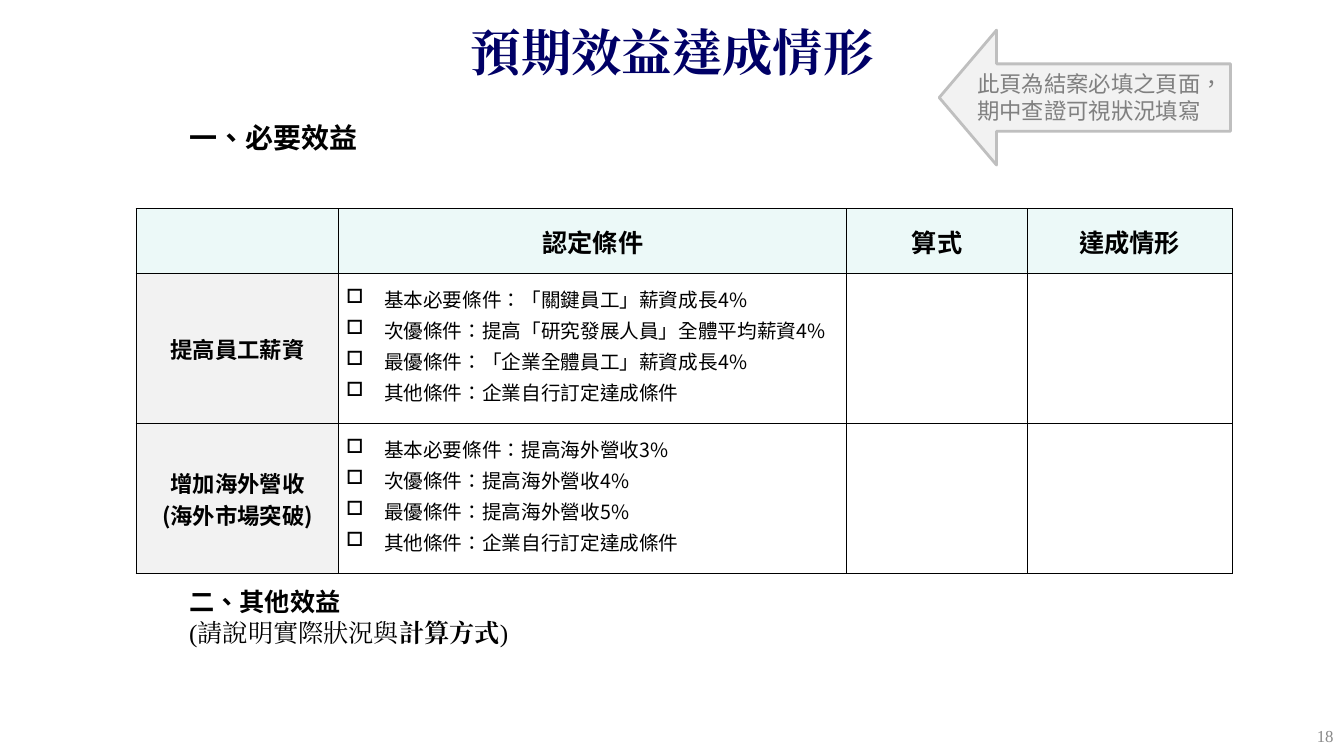
from dataclasses import dataclass

from lxml.etree import SubElement
from pptx import Presentation
from pptx.dml.color import RGBColor
from pptx.enum.shapes import MSO_SHAPE
from pptx.enum.text import MSO_ANCHOR, MSO_AUTO_SIZE, PP_ALIGN
from pptx.oxml.ns import qn
from pptx.util import Cm, Pt


@dataclass(frozen=True)
class Theme:
    sans: str = "Noto Sans CJK SC"
    serif: str = "Times New Roman"
    ink: str = "000000"
    navy: str = "000066"
    hint: str = "808080"
    page: str = "898989"
    header_fill: str = "ECF9F8"
    label_fill: str = "F2F2F2"
    arrow_line: str = "BFBFBF"
    title_size: int = 36
    heading_size: int = 20
    body_size: int = 18
    label_size: int = 16
    condition_size: int = 14
    page_size: int = 12
    line_factor: float = 1.2


THEME = Theme()


@dataclass(frozen=True)
class Style:
    size: int
    font: str = THEME.sans
    color: str = THEME.ink
    bold: bool = False


@dataclass(frozen=True)
class Box:
    left: float
    top: float
    width: float
    height: float

    def lengths(self) -> tuple:
        return Cm(self.left), Cm(self.top), Cm(self.width), Cm(self.height)


@dataclass(frozen=True)
class TextItem:
    """Each line is a list of (text, style) pieces."""
    box: Box
    lines: list
    wrap: bool = True
    align: PP_ALIGN = PP_ALIGN.LEFT
    anchor: MSO_ANCHOR = MSO_ANCHOR.TOP


@dataclass(frozen=True)
class Benefit:
    label: list
    conditions: list


HEADING = Style(THEME.heading_size, bold=True)
BODY_BOLD = Style(THEME.body_size, bold=True)
LABEL = Style(THEME.label_size, bold=True)
CONDITION = Style(THEME.condition_size)
HINT = Style(THEME.label_size, color=THEME.hint)
NOTE = Style(THEME.body_size, THEME.serif)
NOTE_BOLD = Style(THEME.body_size, THEME.serif, bold=True)
TITLE = Style(THEME.title_size, THEME.serif, THEME.navy, True)
PAGE = Style(THEME.page_size, THEME.serif, THEME.page)

TITLE_ITEM = TextItem(Box(1.7, 0.41, 30.48, 2), [[("預期效益達成情形", TITLE)]],
                      align=PP_ALIGN.CENTER)
TEXTS = [
    TextItem(Box(25.96, 18.03, 7.9, 1.02), [[("18", PAGE)]],
             align=PP_ALIGN.RIGHT, anchor=MSO_ANCHOR.MIDDLE),
    TextItem(Box(4.52, 14.66, 17.2, 2.82), [
        [("二、其他效益", BODY_BOLD)],
        [("(請說明實際狀況與", NOTE), ("計算方式", NOTE_BOLD), (")", NOTE)],
    ]),
    TextItem(Box(4.52, 2.92, 4.78, 1.11), [[("一、必要效益", HEADING)]], wrap=False),
]
HINT_ITEM = TextItem(Box(24.38, 1.65, 6.86, 1.63),
                     [[("此頁為結案必填之頁面，期中查證可視狀況填寫", HINT)]])
ARROW_BOX = Box(23.67, 0.76, 7.34, 3.4)

TABLE_BOX = Box(3.43, 5.26, 27.62, 9.19)
COLUMN_WIDTHS = [5.11, 12.8, 4.55, 5.16]
ROW_HEIGHTS = [1.63, 3.78, 3.78]
HEADERS = ["", "認定條件", "算式", "達成情形"]
BENEFITS = [
    Benefit(["提高員工薪資"], [
        "基本必要條件：「關鍵員工」薪資成長4%",
        "次優條件：提高「研究發展人員」全體平均薪資4%",
        "最優條件：「企業全體員工」薪資成長4%",
        "其他條件：企業自行訂定達成條件",
    ]),
    Benefit(["增加海外營收", "(海外市場突破)"], [
        "基本必要條件：提高海外營收3%",
        "次優條件：提高海外營收4%",
        "最優條件：提高海外營收5%",
        "其他條件：企業自行訂定達成條件",
    ]),
]


def add_styled_run(paragraph, text: str, style: Style) -> None:
    run = paragraph.add_run()
    run.text = text
    run.font.size = Pt(style.size)
    run.font.bold = style.bold
    run.font.color.rgb = RGBColor.from_string(style.color)
    run.font.name = style.font
    properties = run._r.get_or_add_rPr()
    properties.set("lang", "zh-TW")
    SubElement(properties, qn("a:ea"), typeface=style.font)


def write_lines(text_frame, lines: list, align: PP_ALIGN) -> list:
    text_frame.text = "\n" * (len(lines) - 1)
    for paragraph, pieces in zip(text_frame.paragraphs, lines):
        paragraph.alignment = align
        for text, style in pieces:
            add_styled_run(paragraph, text, style)
    return list(text_frame.paragraphs)


def fill_text_shape(shape, item: TextItem) -> None:
    shape.left, shape.top, shape.width, shape.height = item.box.lengths()
    frame = shape.text_frame
    frame.word_wrap = item.wrap
    frame.auto_size = MSO_AUTO_SIZE.NONE
    frame.vertical_anchor = item.anchor
    for paragraph, pieces in zip(write_lines(frame, item.lines, item.align), item.lines):
        paragraph.line_spacing = Pt(pieces[0][1].size * THEME.line_factor)


def add_hint_arrow(slide) -> None:
    group = slide.shapes.add_group_shape()
    arrow = group.shapes.add_shape(MSO_SHAPE.LEFT_ARROW, *ARROW_BOX.lengths())
    arrow.adjustments[0], arrow.adjustments[1] = 0.5, 0.425
    arrow.shadow.inherit = False
    arrow.fill.solid()
    arrow.fill.fore_color.rgb = RGBColor.from_string(THEME.label_fill)
    arrow.line.color.rgb = RGBColor.from_string(THEME.arrow_line)
    arrow.line.width = Pt(2)
    fill_text_shape(group.shapes.add_textbox(*HINT_ITEM.box.lengths()), HINT_ITEM)


def format_cell(cell, fill: str) -> None:
    """Give a cell its borders, margins and fill; an empty fill means none."""
    properties = cell._tc.get_or_add_tcPr()
    for side in ("lnL", "lnR", "lnT", "lnB"):
        line = SubElement(properties, qn(f"a:{side}"), w=str(Pt(1)))
        SubElement(SubElement(line, qn("a:solidFill")), qn("a:srgbClr"), val=THEME.ink)
    cell.margin_left = cell.margin_right = Cm(0.18)
    cell.margin_top = cell.margin_bottom = Cm(0)
    cell.vertical_anchor = MSO_ANCHOR.MIDDLE
    if fill:
        cell.fill.solid()
        cell.fill.fore_color.rgb = RGBColor.from_string(fill)
    else:
        cell.fill.background()


def write_conditions(cell, conditions: list) -> None:
    lines = [[(text, CONDITION)] for text in conditions]
    for index, paragraph in enumerate(write_lines(cell.text_frame, lines, PP_ALIGN.JUSTIFY)):
        properties = paragraph._p.get_or_add_pPr()
        properties.set("marL", str(Cm(0.96)))
        properties.set("indent", str(-Cm(0.96)))
        SubElement(properties, qn("a:buChar"), char="□")
        paragraph.line_spacing = Pt(16)
        paragraph.space_before = Pt(6 if index else 0)


def add_benefit_table(slide) -> None:
    table = slide.shapes.add_table(len(ROW_HEIGHTS), len(COLUMN_WIDTHS),
                                   *TABLE_BOX.lengths()).table
    table.first_row = table.horz_banding = False
    for column, width in zip(table.columns, COLUMN_WIDTHS):
        column.width = Cm(width)
    for row, height in zip(table.rows, ROW_HEIGHTS):
        row.height = Cm(height)
    for column, header in enumerate(HEADERS):
        cell = table.cell(0, column)
        format_cell(cell, THEME.header_fill)
        if header:
            write_lines(cell.text_frame, [[(header, BODY_BOLD)]], PP_ALIGN.CENTER)
    for row, benefit in enumerate(BENEFITS, start=1):
        for column in range(len(HEADERS)):
            format_cell(table.cell(row, column), "" if column else THEME.label_fill)
        label_lines = [[(text, LABEL)] for text in benefit.label]
        write_lines(table.cell(row, 0).text_frame, label_lines, PP_ALIGN.CENTER)
        write_conditions(table.cell(row, 1), benefit.conditions)


def main() -> None:
    presentation = Presentation()
    presentation.slide_width, presentation.slide_height = Cm(33.87), Cm(19.05)
    slide = presentation.slides.add_slide(presentation.slide_layouts.get_by_name("Title Only"))
    fill_text_shape(slide.shapes.title, TITLE_ITEM)
    add_benefit_table(slide)
    for item in TEXTS:
        fill_text_shape(slide.shapes.add_textbox(*item.box.lengths()), item)
    add_hint_arrow(slide)
    presentation.save("out.pptx")


if __name__ == "__main__":
    main()
